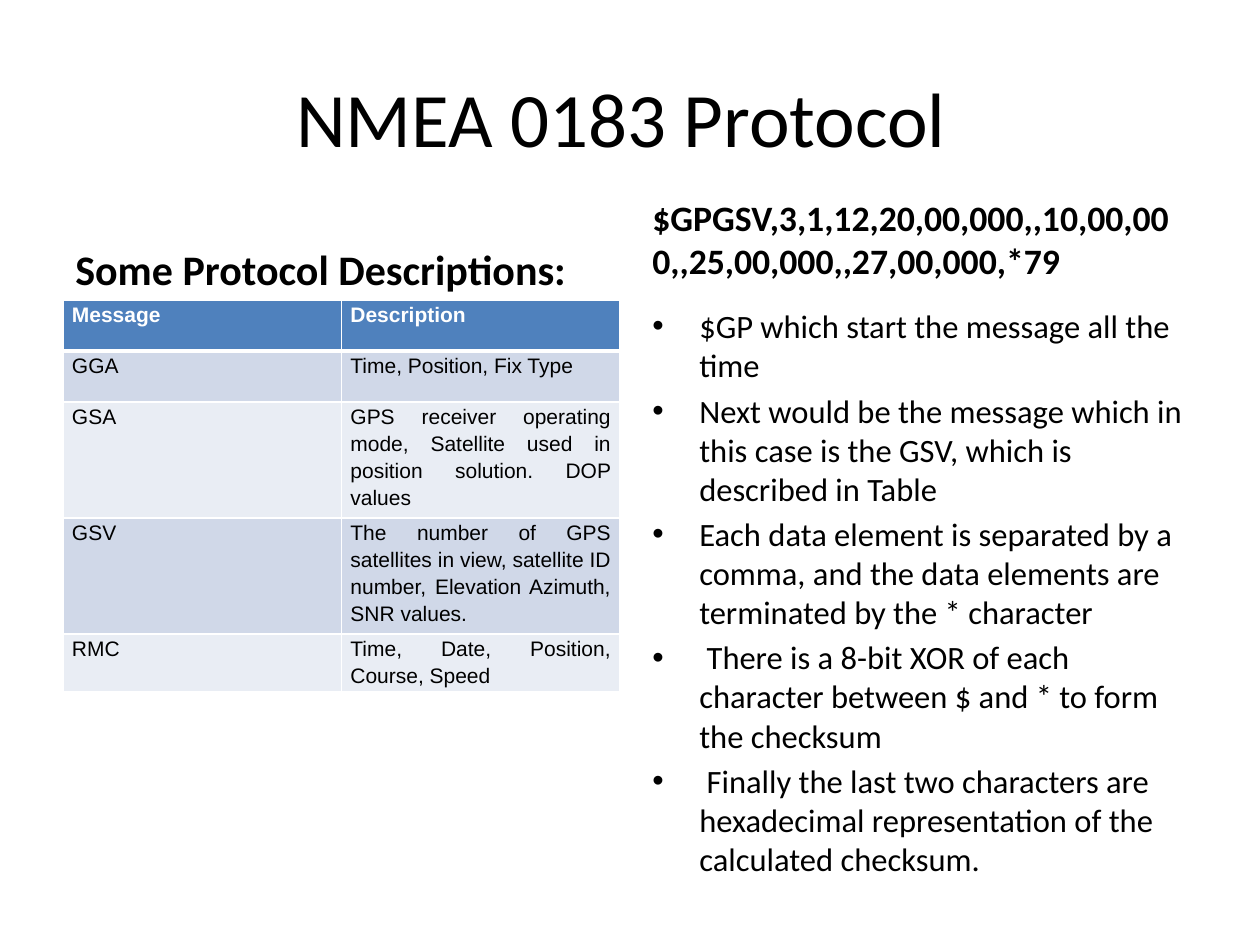
from lxml.etree import SubElement
from pptx import Presentation
from pptx.dml.color import RGBColor
from pptx.enum.text import MSO_ANCHOR, PP_ALIGN
from pptx.oxml.ns import qn
from pptx.util import Pt

PX = 914400 // 126
BLACK = RGBColor(0, 0, 0)
WHITE = RGBColor(255, 255, 255)
HEADER_BLUE = RGBColor(0x4F, 0x81, 0xBD)
BAND_DARK = RGBColor(0xD0, 0xD8, 0xE8)
BAND_LIGHT = RGBColor(0xE9, 0xED, 0xF4)

MESSAGES = [
    ("Message ", "Description"),
    ("GGA", "Time, Position, Fix Type"),
    ("GSA", "GPS receiver operating mode, Satellite used in position solution. DOP values"),
    ("GSV", "The number of GPS satellites in view, satellite ID number, Elevation Azimuth, SNR values."),
    ("RMC", "Time, Date, Position, Course, Speed"),
]
EXPLANATIONS = [
    "$GP which start the message all the time",
    "Next would be the message which in this case is the GSV, which is described in Table",
    "Each data element is separated by a comma, and the data elements are terminated by the * character",
    " There is a 8-bit XOR of each character between $ and * to form the checksum",
    " Finally the last two characters are hexadecimal representation of the calculated checksum.",
]


def write(paragraph, text, size, font="Calibri", color=BLACK, bold=False,
          align=PP_ALIGN.LEFT, before=0, line_spacing=None):
    """Put one formatted run of text into a paragraph."""
    paragraph.alignment = align
    paragraph.space_before = Pt(before)
    paragraph.line_spacing = line_spacing
    run = paragraph.add_run()
    run.text = text
    run.font.name = font
    run.font.size = Pt(size)
    run.font.bold = bold
    run.font.color.rgb = color


def add_text(slide, box, lines, anchor=MSO_ANCHOR.TOP, bottom=6, bulleted=False, **style):
    """Add a wrapping text box with one paragraph per line."""
    frame = slide.shapes.add_textbox(*(value * PX for value in box)).text_frame
    frame.word_wrap = True
    frame.vertical_anchor = anchor
    frame.margin_bottom = bottom * PX
    for index, line in enumerate(lines):
        paragraph = frame.add_paragraph() if index else frame.paragraphs[0]
        write(paragraph, line, **style)
        if bulleted:
            add_bullet(paragraph, 47)


def add_bullet(paragraph, indent):
    """Give a paragraph a round bullet and a hanging indent."""
    properties = paragraph._p.get_or_add_pPr()
    properties.set("marL", str(indent * PX))
    properties.set("indent", str(-indent * PX))
    SubElement(properties, qn("a:buFont"), typeface="Arial")
    SubElement(properties, qn("a:buChar"), char="•")


def format_cell(cell, fill, widths):
    """Set a cell's margins, white borders and fill."""
    cell.margin_left = cell.margin_right = 9 * PX
    cell.margin_top = cell.margin_bottom = 0
    properties = cell._tc.get_or_add_tcPr()
    for side, width in zip("LRTB", widths):
        line = SubElement(properties, qn(f"a:ln{side}"), w=str(Pt(width)))
        solid = SubElement(line, qn("a:solidFill"))
        SubElement(solid, qn("a:srgbClr"), val=str(WHITE))
    cell.fill.solid()
    cell.fill.fore_color.rgb = fill


def add_message_table(slide, left, top, width, row_height):
    """Add the banded table of message descriptions."""
    table = slide.shapes.add_table(
        len(MESSAGES), 2, left * PX, top * PX, width * PX, row_height * len(MESSAGES) * PX).table
    for row, texts in enumerate(MESSAGES):
        header = row == 0
        fill = HEADER_BLUE if header else BAND_DARK if row % 2 else BAND_LIGHT
        widths = (1, 1, 3 if row == 1 else 1, 3 if header else 1)
        for column, text in enumerate(texts):
            cell = table.cell(row, column)
            format_cell(cell, fill, widths)
            write(cell.text_frame.paragraphs[0], text, 12, font="Arial", bold=header,
                  color=WHITE if header else BLACK, align=PP_ALIGN.JUSTIFY, line_spacing=1.15)


def main():
    """Build the protocol slide and save it."""
    presentation = Presentation()
    presentation.slide_width = 1260 * PX
    presentation.slide_height = 945 * PX
    slide = presentation.slides.add_slide(presentation.slide_layouts[6])
    add_text(slide, (63, 38, 1134, 158), ["NMEA 0183 Protocol "], size=44,
             anchor=MSO_ANCHOR.MIDDLE, align=PP_ALIGN.CENTER)
    add_text(slide, (63, 212, 557, 88), ["Some Protocol Descriptions:"], size=24,
             anchor=MSO_ANCHOR.BOTTOM, bold=True, before=4.8)
    add_message_table(slide, 63, 300, 557, 51)
    add_text(slide, (640, 242, 557, 88),
             ["$GPGSV,3,1,12,20,00,000,,10,00,000,,25,00,000,,27,00,000,*79"], size=20.4,
             anchor=MSO_ANCHOR.BOTTOM, bottom=48, bold=True, before=4)
    add_text(slide, (640, 300, 557, 544), EXPLANATIONS, size=18.6, before=3.6, bulleted=True)
    presentation.save("out.pptx")


if __name__ == "__main__":
    main()
